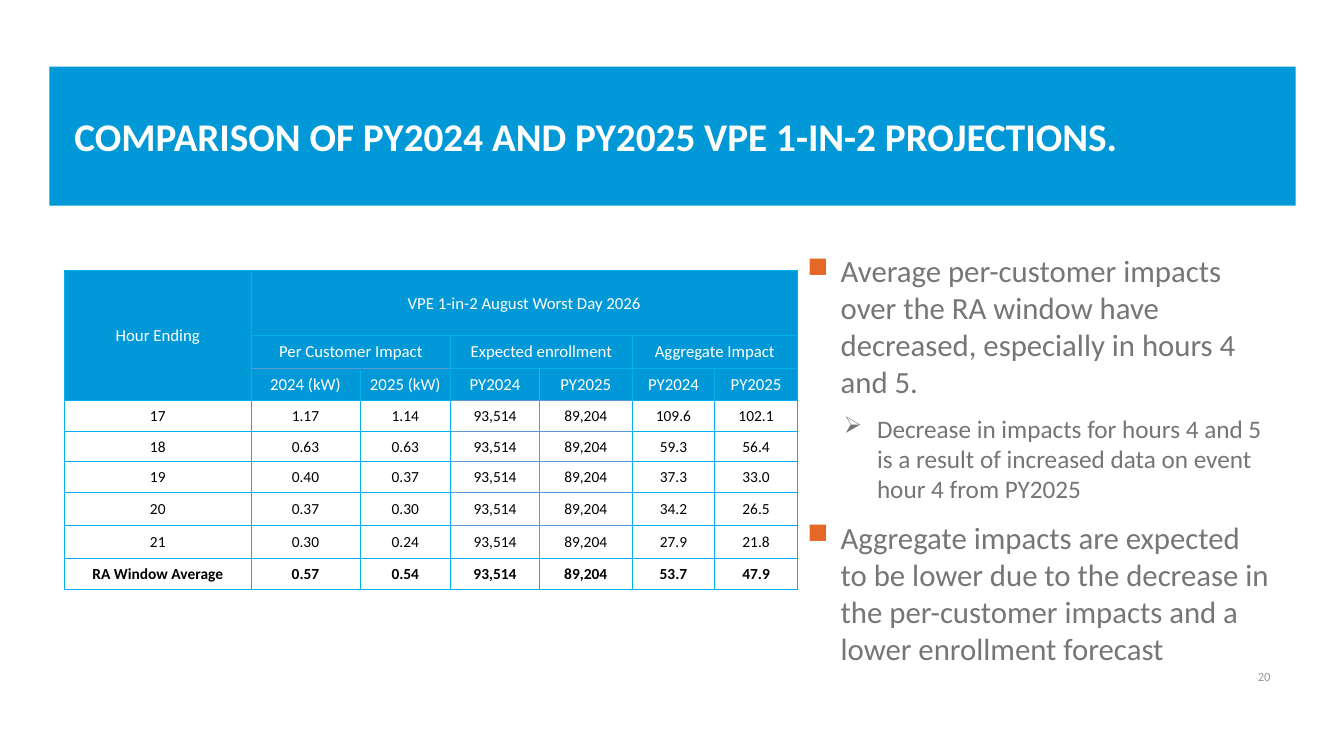
from lxml.etree import SubElement
from pptx import Presentation
from pptx.dml.color import RGBColor
from pptx.enum.shapes import MSO_SHAPE
from pptx.enum.text import MSO_ANCHOR as Anchor, PP_ALIGN as Align
from pptx.oxml.ns import qn
from pptx.util import Inches, Pt

FONT = "Calibri"
BLUE, WHITE, BLACK = "0098D7", "FFFFFF", "000000"
GRID, INNER_GRID = "00B0F0", "5B9BD5"
ORANGE, GREY, MID_GREY, LIGHT_GREY = "E66827", "767676", "757575", "999999"

COLUMN_WIDTHS = [1.85, 1.08, 0.9, 0.88, 0.92, 0.82, 0.82]
ROW_HEIGHTS = [0.65, 0.32, 0.32, 0.31, 0.3, 0.3, 0.33, 0.33, 0.31]
HEADER_ROWS = 3
IMPACTS = [
    ["Hour Ending", "VPE 1-in-2 August Worst Day 2026", "", "", "", "", ""],
    ["", "Per Customer Impact", "", "Expected enrollment", "", "Aggregate Impact", ""],
    ["", "2024 (kW)", "2025 (kW)", "PY2024", "PY2025", "PY2024", "PY2025"],
    ["17", "1.17", "1.14", "93,514", "89,204", "109.6", "102.1"],
    ["18", "0.63", "0.63", "93,514", "89,204", "59.3", "56.4"],
    ["19", "0.40", "0.37", "93,514", "89,204", "37.3", "33.0"],
    ["20", "0.37", "0.30", "93,514", "89,204", "34.2", "26.5"],
    ["21", "0.30", "0.24", "93,514", "89,204", "27.9", "21.8"],
    ["RA Window Average", "0.57", "0.54", "93,514", "89,204", "53.7", "47.9"],
]
# First and last cell of each merged heading, as (row, column)
MERGES = [((0, 0), (2, 0)), ((0, 1), (0, 6)),
          ((1, 1), (1, 2)), ((1, 3), (1, 4)), ((1, 5), (1, 6))]

FINDINGS = [
    (0, "Average per-customer impacts over the RA window have decreased, "
        "especially in hours 4 and 5."),
    (1, "Decrease in impacts for hours 4 and 5 is a result of increased data "
        "on event hour 4 from PY2025"),
    (0, "Aggregate impacts are expected to be lower due to the decrease in the "
        "per-customer impacts and a lower enrollment forecast"),
]
# Per level: bullet, bullet colour, text colour, size, left margin
LEVELS = [("■", ORANGE, GREY, 22, 0.33), ("➢", MID_GREY, MID_GREY, 18, 0.69)]
HANGING = 0.33


def rgb(hex_colour):
    return RGBColor.from_string(hex_colour)


def add_run(paragraph, text, size, colour, bold=False):
    run = paragraph.add_run()
    run.text = text
    run.font.name = FONT
    run.font.size = Pt(size)
    run.font.bold = bold
    run.font.color.rgb = rgb(colour)


def add_frame(slide, box, anchor=Anchor.TOP):
    frame = slide.shapes.add_textbox(*map(Inches, box)).text_frame
    frame.word_wrap = True
    frame.vertical_anchor = anchor
    return frame


def add_title_band(slide, box, title):
    left, top, width, height = box
    band = slide.shapes.add_shape(MSO_SHAPE.RECTANGLE, *map(Inches, box))
    band.shadow.inherit = False
    band.fill.solid()
    band.fill.fore_color.rgb = rgb(BLUE)
    band.line.fill.background()
    inset = 0.15
    heading = add_frame(slide, (left + inset, top + inset, width - 2 * inset,
                                height - 2 * inset), Anchor.MIDDLE)
    add_run(heading.paragraphs[0], title, 28, WHITE, bold=True)


def horizontal_edge(boundary, column):
    """Colour of the rule above the row numbered boundary."""
    under_customer = boundary == 2 and column in (1, 2)
    in_enrollment = 3 <= boundary <= 7 and column in (3, 4)
    return INNER_GRID if under_customer or in_enrollment else GRID


def vertical_edge(row, boundary):
    """Colour of the rule left of the column numbered boundary."""
    return INNER_GRID if boundary == 4 and 2 <= row <= 7 else GRID


def set_borders(cell, row, column):
    edges = {"a:lnL": vertical_edge(row, column),
             "a:lnR": vertical_edge(row, column + 1),
             "a:lnT": horizontal_edge(row, column),
             "a:lnB": horizontal_edge(row + 1, column)}
    properties = cell._tc.get_or_add_tcPr()
    for tag, colour in edges.items():
        line = SubElement(properties, qn(tag), w=str(Pt(0.5)))
        SubElement(SubElement(line, qn("a:solidFill")), qn("a:srgbClr"), val=colour)


def fill_cell(cell, row, column):
    is_header = row < HEADER_ROWS
    cell.margin_left = cell.margin_right = cell.margin_top = Inches(0.01)
    cell.margin_bottom = 0
    cell.vertical_anchor = Anchor.MIDDLE
    set_borders(cell, row, column)
    if is_header:
        cell.fill.solid()
        cell.fill.fore_color.rgb = rgb(BLUE)
    else:
        cell.fill.background()
    text = IMPACTS[row][column]
    if text:
        paragraph = cell.text_frame.paragraphs[0]
        paragraph.alignment = Align.CENTER
        add_run(paragraph, text, 12 if is_header else 11,
                WHITE if is_header else BLACK, bold=row == len(IMPACTS) - 1)


def add_impact_table(slide, left, top):
    size = sum(COLUMN_WIDTHS), sum(ROW_HEIGHTS)
    table = slide.shapes.add_table(len(ROW_HEIGHTS), len(COLUMN_WIDTHS),
                                   *map(Inches, (left, top, *size))).table
    table.first_row = table.horz_banding = False
    for column, width in zip(table.columns, COLUMN_WIDTHS):
        column.width = Inches(width)
    for row, height in zip(table.rows, ROW_HEIGHTS):
        row.height = Inches(height)
    for first, last in MERGES:
        table.cell(*first).merge(table.cell(*last))
    for row in range(len(ROW_HEIGHTS)):
        for column in range(len(COLUMN_WIDTHS)):
            fill_cell(table.cell(row, column), row, column)


def set_bullet(paragraph, bullet, colour, margin):
    properties = paragraph._p.get_or_add_pPr()
    properties.set("marL", str(Inches(margin)))
    properties.set("indent", str(-Inches(HANGING)))
    SubElement(SubElement(properties, qn("a:buClr")), qn("a:srgbClr"), val=colour)
    SubElement(properties, qn("a:buSzPct"), val="92000")
    SubElement(properties, qn("a:buChar"), char=bullet)


def add_findings(slide, box):
    frame = add_frame(slide, box)
    for index, (level, text) in enumerate(FINDINGS):
        bullet, bullet_colour, colour, size, margin = LEVELS[level]
        paragraph = frame.add_paragraph() if index else frame.paragraphs[0]
        paragraph.level = level
        set_bullet(paragraph, bullet, bullet_colour, margin)
        if index:
            paragraph.space_before = Pt(0.2 * size)
        paragraph.space_after = Pt(6)
        add_run(paragraph, text, size, colour)


def add_page_number(slide, box, number):
    paragraph = add_frame(slide, box, Anchor.MIDDLE).paragraphs[0]
    paragraph.alignment = Align.RIGHT
    add_run(paragraph, number, 9, LIGHT_GREY)


def main():
    deck = Presentation()
    deck.slide_width, deck.slide_height = Inches(13.33), Inches(7.5)
    slide = deck.slides.add_slide(deck.slide_layouts[6])
    left, right, split = 0.64, 12.7, 7.91
    add_title_band(slide, (0.49, 0.66, 12.36, 1.38),
                   "COMPARISON OF PY2024 AND PY2025 VPE 1-IN-2 PROJECTIONS.")
    add_findings(slide, (split, 2.45, right - split, 4.37))
    add_page_number(slide, (right - 1.15, 6.51, 1.15, 0.4), "20")
    add_impact_table(slide, left, 2.68)
    deck.save("out.pptx")


if __name__ == "__main__":
    main()
